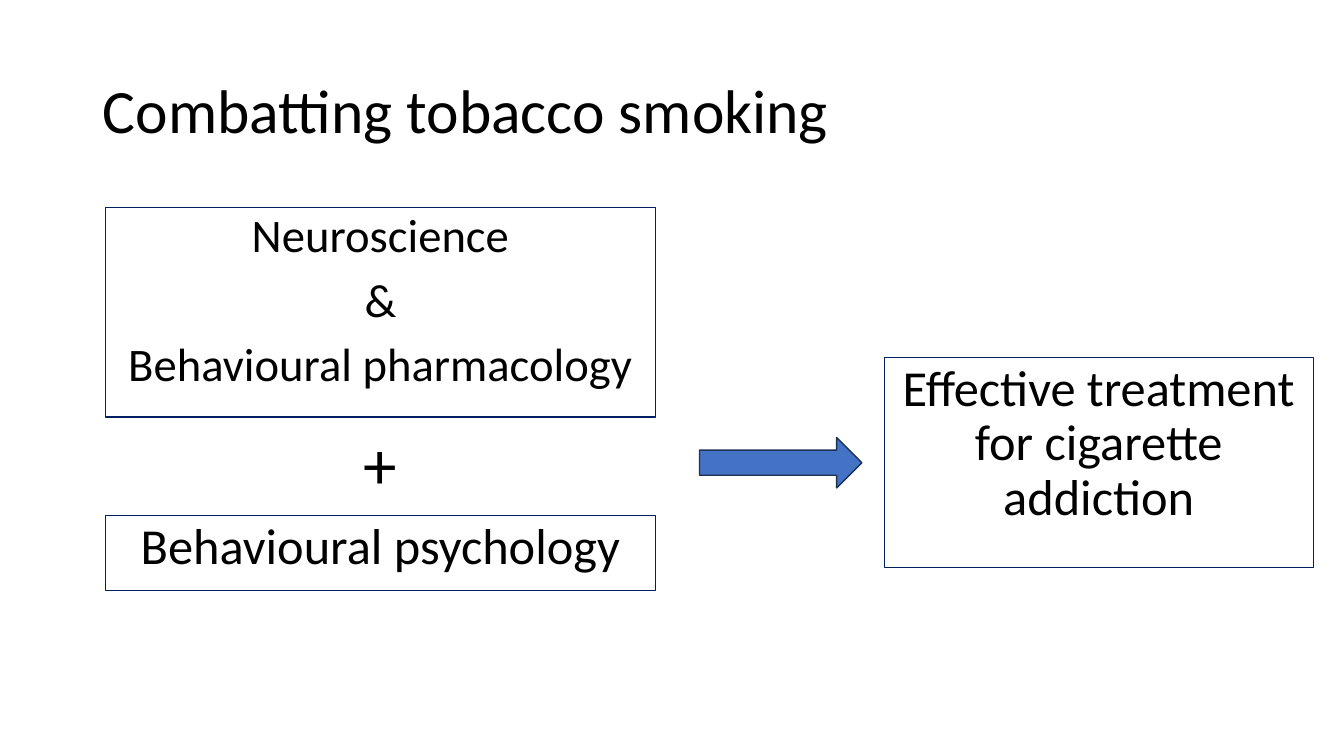
from dataclasses import dataclass

from pptx import Presentation
from pptx.dml.color import RGBColor as Rgb
from pptx.enum.shapes import MSO_SHAPE as Kind
from pptx.enum.text import MSO_ANCHOR as Anchor, MSO_AUTO_SIZE as Fit, PP_ALIGN as Align
from pptx.util import Cm, Pt


@dataclass(frozen=True)
class Theme:
    font: str = "Calibri"
    ink: str = "000000"
    frame: str = "002060"
    fill: str = "4472C4"
    edge: str = "1E3256"
    title: float = 44
    body: float = 36
    small: float = 33.3
    plus: float = 48


THEME = Theme()


def write(shape, text, size, align=Align.CENTER, anchor=Anchor.TOP,
          wrap=True, lines=0.9, gap=10):
    """Fill a shape with text, one paragraph per line."""
    frame = shape.text_frame
    frame.text = text
    frame.auto_size = Fit.NONE
    frame.word_wrap = wrap
    frame.vertical_anchor = anchor
    for para in frame.paragraphs:
        para.alignment = align
        para.line_spacing = lines
        para.space_before = Pt(gap)
        font = para.runs[0].font
        font.name, font.size = THEME.font, Pt(size)
        font.color.rgb = Rgb.from_string(THEME.ink)


def draw(slide, kind, box, line, width, fill=None):
    """Add an outlined shape, hollow unless a fill is given."""
    shape = slide.shapes.add_shape(kind, *map(Cm, box))
    shape.shadow.inherit = False
    shape.line.color.rgb = Rgb.from_string(line)
    shape.line.width = Pt(width)
    if fill:
        shape.fill.solid()
        shape.fill.fore_color.rgb = Rgb.from_string(fill)
    else:
        shape.fill.background()
    return shape


def panel(slide, box, text, size):
    shape = draw(slide, Kind.RECTANGLE, box, THEME.frame, 0.75)
    write(shape, text, size)


def heading(slide, box, text):
    title = slide.shapes.title
    title.left, title.top, title.width, title.height = map(Cm, box)
    write(title, text, THEME.title, align=Align.LEFT, anchor=Anchor.MIDDLE, gap=0)


def sources(slide, box):
    """Two stacked panels with a plus sign between them."""
    x, y, w, h = box
    upper, lower, side = 5.28, 1.88, 1.37
    panel(slide, (x, y, w, upper),
          "Neuroscience\n&\nBehavioural pharmacology", THEME.small)
    panel(slide, (x, y + h - lower, w, lower), "Behavioural psychology", THEME.body)
    plus = slide.shapes.add_textbox(
        Cm(x + (w - side) / 2), Cm(y + upper), Cm(side), Cm(2.31))
    write(plus, "+", THEME.plus, wrap=False, lines=1.0, gap=0)


def outcome(slide, box):
    """Arrow on the left, resulting treatment on the right."""
    x, y, w, h = box
    wide, thick, goal = 4.09, 1.27, 10.82
    draw(slide, Kind.RIGHT_ARROW, (x, y + (h - thick) / 2, wide, thick),
         THEME.edge, 1, THEME.fill)
    panel(slide, (x + w - goal, y, goal, h),
          "Effective treatment for cigarette addiction", THEME.body)


def main():
    deck = Presentation()
    deck.slide_width, deck.slide_height = Cm(33.87), Cm(19.05)
    slide = deck.slides.add_slide(deck.slide_layouts[5])
    heading(slide, (2.34, 1.02, 29.21, 3.68), "Combatting tobacco smoking")
    sources(slide, (2.67, 5.23, 13.84, 9.65))
    outcome(slide, (17.63, 9.02, 15.47, 5.28))
    deck.save("out.pptx")


if __name__ == "__main__":
    main()
